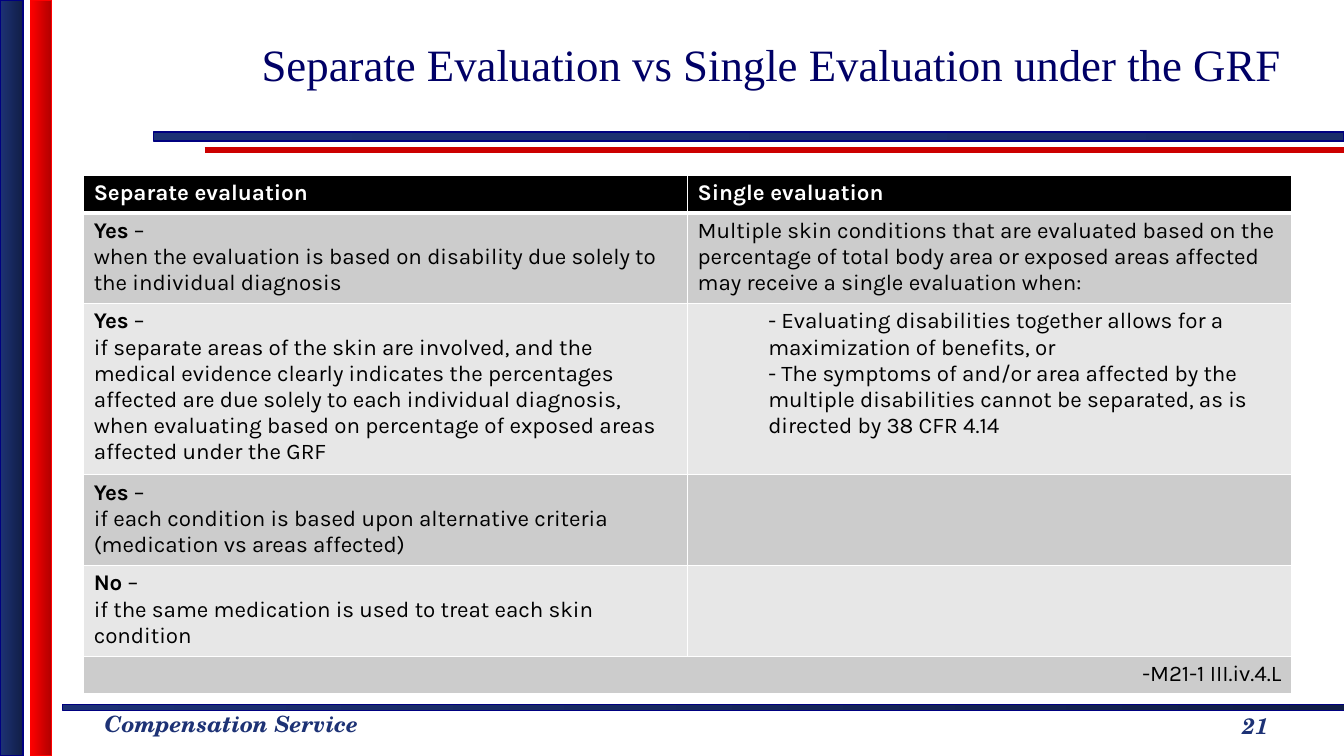
import copy
import pptx
import pptx.util
import pptx.dml.color
import pptx.enum.shapes
import pptx.enum.text
import pptx.oxml
import pptx.oxml.ns
from pptx.util import Inches

COLORS = {
    "navy": "1D3275", "deep": "111E46", "shade": "1A2D69", "edge": "000080",
    "red": "FF0000", "maroon": "B20000", "rule": "CC0000", "title": "000066",
    "black": "000000", "white": "FFFFFF", "dark": "CCCCCC", "light": "E7E7E7",
}
ALIGN = pptx.enum.text.PP_ALIGN
ANCHOR = pptx.enum.text.MSO_ANCHOR
TITLE = {"name": "Times New Roman", "size": 32, "color": "title"}
FOOTER = {"name": "TeX Gyre Schola", "size": 16, "color": "navy", "bold": True, "italic": True}
BODY = {"name": "Karla", "size": 16, "color": "black", "bold": False}
STRONG = {**BODY, "bold": True}
HEADER = {**STRONG, "color": "white"}

BARS = [
    (0.62, 6.99, 12.72, 0.06, "navy", "deep", "edge"),
    (1.52, 1.31, 11.81, 0.09, "navy", "shade", "edge"),
    (0, 0, 0.23, 7.5, "navy", "deep", "edge"),
    (0.3, 0, 0.21, 7.5, "red", "maroon", "red"),
]
ROW_HEIGHTS = [0.37, 0.82, 1.26, 0.82, 0.58, 0.37]
ROWS = [
    [[[("Separate evaluation", HEADER)]], [[("Single evaluation", HEADER)]]],
    [[[("Yes", STRONG), (" –\nwhen the evaluation is based on disability due solely to "
                         "the individual diagnosis", BODY)]],
     [[("Multiple skin conditions that are evaluated based on the percentage of total body "
        "area or exposed areas affected may receive a single evaluation when:", BODY)]]],
    [[[("Yes", STRONG), (" –\nif separate areas of the skin are involved, and the medical "
                         "evidence clearly indicates the percentages affected are due solely "
                         "to each individual diagnosis, when evaluating based on percentage "
                         "of exposed areas affected under the GRF", BODY)]],
     [[("- Evaluating disabilities together allows for a maximization of benefits, or\n"
        "- The symptoms of and/or area affected by the multiple disabilities cannot be "
        "separated, as is directed by 38 CFR 4.14", BODY)]]],
    [[[("Yes", STRONG), (" –", BODY)],
      [("if each condition is based upon alternative criteria (medication vs areas affected)",
        BODY)]], [[("", BODY)]]],
    [[[("No", STRONG), (" –", BODY)],
      [("if the same medication is used to treat each skin condition", BODY)]], [[("", BODY)]]],
    [[[("-M21-1 III.iv.4.L", BODY)]], [[("", BODY)]]],
]


def rgb(name):
    return pptx.dml.color.RGBColor.from_string(COLORS[name])


class Slide:
    def __init__(self, deck):
        self.page = deck.slides.add_slide(deck.slide_layouts[5])
        self.shapes = self.page.shapes

    def span(self, para, text, style):
        for index, line in enumerate(text.split("\n")):
            if index:
                para.add_line_break()
                para._p[-1].append(copy.deepcopy(span._r.rPr))
            span = para.add_run()
            span.text = line
            for key, value in style.items():
                if key == "color":
                    span.font.color.rgb = rgb(value)
                else:
                    setattr(span.font, key, pptx.util.Pt(value) if key == "size" else value)

    def fill_text(self, frame, paragraphs, align=ALIGN.LEFT):
        for index, spans in enumerate(paragraphs):
            para = frame.add_paragraph() if index else frame.paragraphs[0]
            para.alignment = align
            for text, style in spans:
                if text:
                    self.span(para, text, style)
                else:
                    para.font.size = pptx.util.Pt(style["size"])

    def bar(self, left, top, width, height, start, end, edge):
        bar = self.shapes.add_shape(pptx.enum.shapes.MSO_SHAPE.RECTANGLE, Inches(left),
                                    Inches(top), Inches(width), Inches(height))
        bar.shadow.inherit = False
        bar.fill.gradient()
        bar.fill.gradient_angle = 0
        for stop, color, position in zip(bar.fill.gradient_stops, (start, end), (0, 1)):
            stop.color.rgb = rgb(color)
            stop.position = position
        bar.line.color.rgb = rgb(edge)
        bar.line.width = pptx.util.Pt(1)

    def rule(self, left, right, top, color, width):
        rule = self.shapes.add_connector(pptx.enum.shapes.MSO_CONNECTOR.STRAIGHT, Inches(left),
                                         Inches(top), Inches(right), Inches(top))
        rule.line.color.rgb = rgb(color)
        rule.line.width = pptx.util.Pt(width)
        pptx.oxml.ns.qn("a:effectLst")
        rule._element.spPr.append(pptx.oxml.parse_xml(
            f"<a:effectLst {pptx.oxml.ns.nsdecls('a')}/>"))

    def place(self, box, left, top, width, height):
        values = {"left": left, "top": top, "width": width, "height": height}
        for key, value in values.items():
            setattr(box, key, Inches(value))

    def title(self, text, *place):
        box = self.shapes.title
        self.place(box, *place)
        box.text_frame.word_wrap = True
        box.text_frame.auto_size = pptx.enum.text.MSO_AUTO_SIZE.NONE
        box.text_frame.vertical_anchor = ANCHOR.MIDDLE
        self.fill_text(box.text_frame, [[(text, TITLE)]], ALIGN.CENTER)

    def text(self, text, place, align, anchor, wrap):
        box = self.shapes.add_textbox(*map(Inches, place))
        box.text_frame.word_wrap = wrap
        box.text_frame.vertical_anchor = anchor
        self.fill_text(box.text_frame, [[(text, FOOTER)]], align)

    def borders(self, cell, bottom):
        properties = cell._tc.get_or_add_tcPr()
        widths = {"lnL": 1, "lnR": 1, "lnT": 1, "lnB": bottom}
        for index, (side, width) in enumerate(widths.items()):
            properties.insert(index, pptx.oxml.parse_xml(
                f'<a:{side} {pptx.oxml.ns.nsdecls("a")} w="{pptx.util.Pt(width)}"><a:solidFill>'
                f'<a:srgbClr val="{COLORS["white"]}"/></a:solidFill></a:{side}>'))

    def table(self, rows, heights, left, top, column_width):
        grid = self.shapes.add_table(len(rows), 2, Inches(left), Inches(top),
                                     Inches(2 * column_width), Inches(sum(heights))).table
        for column in grid.columns:
            column.width = Inches(column_width)
        last = len(rows) - 1
        grid.cell(last, 0).merge(grid.cell(last, 1))
        for index, (row, height) in enumerate(zip(rows, heights)):
            grid.rows[index].height = Inches(height)
            color = "black" if index == 0 else "dark" if index % 2 else "light"
            for cell, paragraphs in zip(grid.rows[index].cells, row):
                cell.fill.solid()
                cell.fill.fore_color.rgb = rgb(color)
                self.borders(cell, 1 if index else 3)
                align = ALIGN.RIGHT if index == last else ALIGN.LEFT
                self.fill_text(cell.text_frame, paragraphs, align)
        indented = grid.cell(2, 1).text_frame.paragraphs[0]._p.get_or_add_pPr()
        indented.set("marL", str(Inches(0.7)))
        indented.set("indent", "0")


def main():
    deck = pptx.Presentation()
    deck.slide_width, deck.slide_height = Inches(13.33), Inches(7.5)
    slide = Slide(deck)
    slide.rule(2.03, 13.33, 1.49, "rule", 4)
    for bar in BARS:
        slide.bar(*bar)
    slide.text("Compensation Service", (0.94, 7, 2.82, 0.37), ALIGN.LEFT, ANCHOR.TOP, False)
    slide.title("Separate Evaluation vs Single Evaluation under the GRF", 2.34, 0, 10.63, 1.26)
    slide.table(ROWS, ROW_HEIGHTS, 0.83, 1.74, 5.99)
    slide.text("21", (11.56, 6.95, 1.78, 0.5), ALIGN.CENTER, ANCHOR.MIDDLE, True)
    deck.save("out.pptx")


if __name__ == "__main__":
    main()
